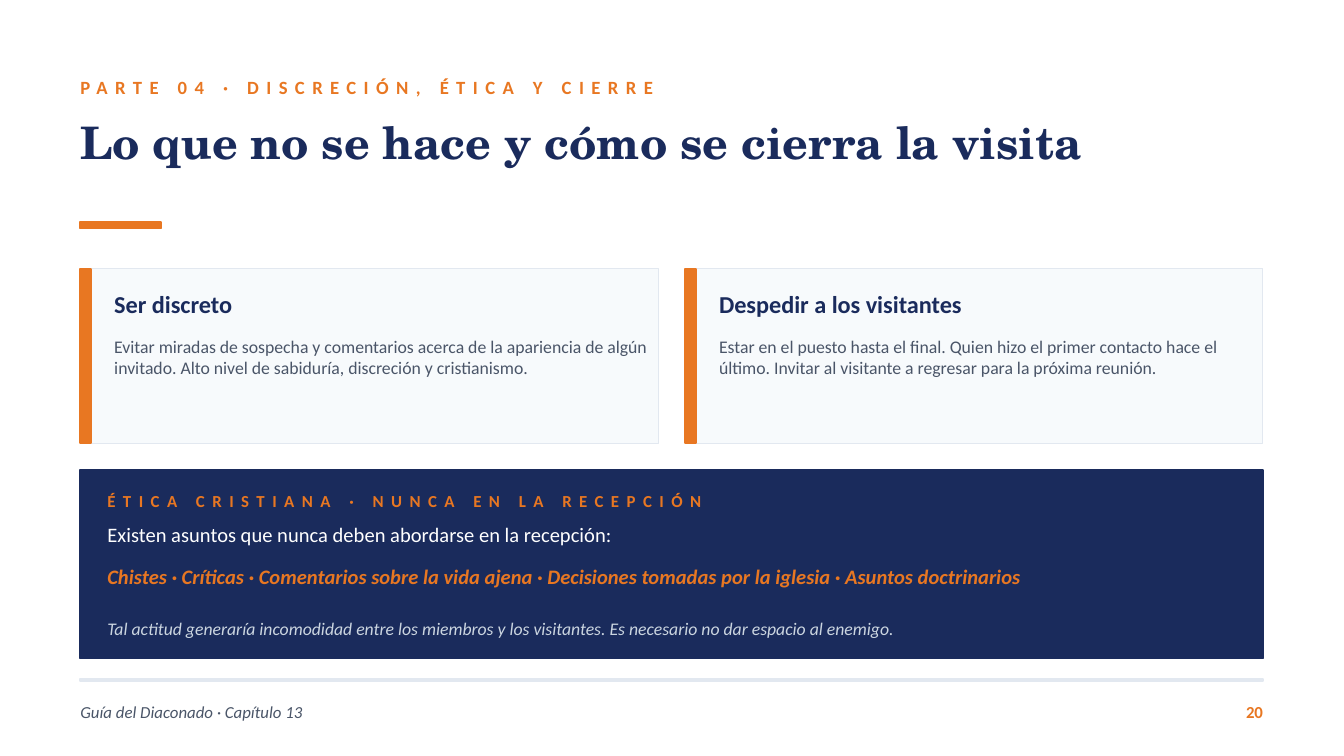
from dataclasses import dataclass

from pptx import Presentation
from pptx.dml.color import RGBColor
from pptx.enum.shapes import MSO_SHAPE
from pptx.enum.text import MSO_ANCHOR as Anchor, PP_ALIGN as Align
from pptx.util import Cm, Pt


@dataclass(frozen=True)
class Theme:
    orange: str = "E87722"
    navy: str = "1A2B5C"
    white: str = "FFFFFF"
    card: str = "F7FAFC"
    border: str = "E2E8F0"
    gray: str = "4A5568"
    pale: str = "CBD5E0"
    body_font: str = "Calibri"
    title_font: str = "TeX Gyre Schola"
    title: float = 24
    heading: float = 13
    lead: float = 11
    eyebrow: float = 10
    body: float = 9.5
    small: float = 9
    tracking: float = 4


THEME = Theme()
MARGIN = 1.52
CONTENT_WIDTH = 22.35
CARD_TOP = 5.08
CARD_WIDTH = 10.92
CARD_HEIGHT = 3.3
CARD_PITCH = 11.43
PANEL_LEFT = MARGIN + 0.51
PANEL_TEXT_WIDTH = 21.34
FOOTER_TOP = 13.08

CARDS = [
    ("Ser discreto",
     "Evitar miradas de sospecha y comentarios acerca de la apariencia de algún "
     "invitado. Alto nivel de sabiduría, discreción y cristianismo."),
    ("Despedir a los visitantes",
     "Estar en el puesto hasta el final. Quien hizo el primer contacto hace el "
     "último. Invitar al visitante a regresar para la próxima reunión."),
]


def add_box(slide, left, top, width, height, fill, line=None, line_width=1):
    shape = slide.shapes.add_shape(
        MSO_SHAPE.RECTANGLE, Cm(left), Cm(top), Cm(width), Cm(height))
    shape.shadow.inherit = False
    shape.fill.solid()
    shape.fill.fore_color.rgb = RGBColor.from_string(fill)
    shape.line.color.rgb = RGBColor.from_string(line or fill)
    shape.line.width = Pt(line_width)


def add_text(slide, text, left, top, width, height, size, color, bold=False,
             italic=False, font=THEME.body_font, anchor=Anchor.TOP,
             align=Align.LEFT, tracking=0):
    """Add a one-run text box without margins; tracking is in points."""
    shape = slide.shapes.add_textbox(Cm(left), Cm(top), Cm(width), Cm(height))
    frame = shape.text_frame
    frame.word_wrap = True
    frame.vertical_anchor = anchor
    frame.margin_left = frame.margin_right = 0
    frame.margin_top = frame.margin_bottom = 0
    paragraph = frame.paragraphs[0]
    paragraph.alignment = align
    run = paragraph.add_run()
    run.text = text
    run.font.name = font
    run.font.size = Pt(size)
    run.font.bold = bold
    run.font.italic = italic
    run.font.color.rgb = RGBColor.from_string(color)
    if tracking:
        run._r.get_or_add_rPr().set("spc", str(int(tracking * 100)))


def add_eyebrow(slide, text, left, top, height, size):
    """Add a letter-spaced label in capitals."""
    add_text(slide, text, left, top, 17.78, height, size, THEME.orange,
             bold=True, anchor=Anchor.MIDDLE, tracking=THEME.tracking)


def add_header(slide):
    add_eyebrow(slide, "PARTE 04 · DISCRECIÓN, ÉTICA Y CIERRE",
                MARGIN, 1.27, 0.76, THEME.eyebrow)
    add_text(slide, "Lo que no se hace y cómo se cierra la visita",
             MARGIN, 2.16, 22.86, 1.78, THEME.title, THEME.navy,
             bold=True, font=THEME.title_font)
    add_box(slide, MARGIN, 4.19, 1.52, 0.13, THEME.orange)


def add_card(slide, left, heading, body):
    add_box(slide, left, CARD_TOP, CARD_WIDTH, CARD_HEIGHT,
            THEME.card, THEME.border, 0.5)
    add_box(slide, left, CARD_TOP, 0.2, CARD_HEIGHT, THEME.orange)
    text_left = left + 0.64
    add_text(slide, heading, text_left, CARD_TOP + 0.38, 10.16, 0.89,
             THEME.heading, THEME.navy, bold=True)
    add_text(slide, body, text_left, CARD_TOP + 1.27, 10.16, 2.03,
             THEME.body, THEME.gray)


def add_ethics_panel(slide):
    add_box(slide, MARGIN, 8.89, CONTENT_WIDTH, 3.56, THEME.navy)
    add_eyebrow(slide, "ÉTICA CRISTIANA · NUNCA EN LA RECEPCIÓN",
                PANEL_LEFT, 9.14, 0.64, THEME.small)
    add_text(slide, "Existen asuntos que nunca deben abordarse en la recepción:",
             PANEL_LEFT, 9.86, PANEL_TEXT_WIDTH, 0.76, THEME.lead, THEME.white)
    add_text(slide,
             "Chistes · Críticas · Comentarios sobre la vida ajena · "
             "Decisiones tomadas por la iglesia · Asuntos doctrinarios",
             PANEL_LEFT, 10.67, PANEL_TEXT_WIDTH, 1.02, THEME.lead,
             THEME.orange, bold=True, italic=True)
    add_text(slide,
             "Tal actitud generaría incomodidad entre los miembros y los "
             "visitantes. Es necesario no dar espacio al enemigo.",
             PANEL_LEFT, 11.68, PANEL_TEXT_WIDTH, 0.76, THEME.body,
             THEME.pale, italic=True)


def add_footer(slide):
    add_box(slide, MARGIN, 12.83, CONTENT_WIDTH, 0.05, THEME.border)
    add_text(slide, "Guía del Diaconado · Capítulo 13", MARGIN, FOOTER_TOP,
             15.24, 0.76, THEME.small, THEME.gray, italic=True,
             anchor=Anchor.MIDDLE)
    number_width = 1.27
    add_text(slide, "20", MARGIN + CONTENT_WIDTH - number_width, FOOTER_TOP,
             number_width, 0.76, THEME.small, THEME.orange, bold=True,
             anchor=Anchor.MIDDLE, align=Align.RIGHT)


def main():
    presentation = Presentation()
    presentation.slide_width = Cm(25.4)
    presentation.slide_height = Cm(14.29)
    slide = presentation.slides.add_slide(presentation.slide_layouts[6])
    slide.background.fill.solid()
    slide.background.fill.fore_color.rgb = RGBColor.from_string(THEME.white)

    add_header(slide)
    for column, (heading, body) in enumerate(CARDS):
        add_card(slide, MARGIN + column * CARD_PITCH, heading, body)
    add_ethics_panel(slide)
    add_footer(slide)
    presentation.save("out.pptx")


if __name__ == "__main__":
    main()
